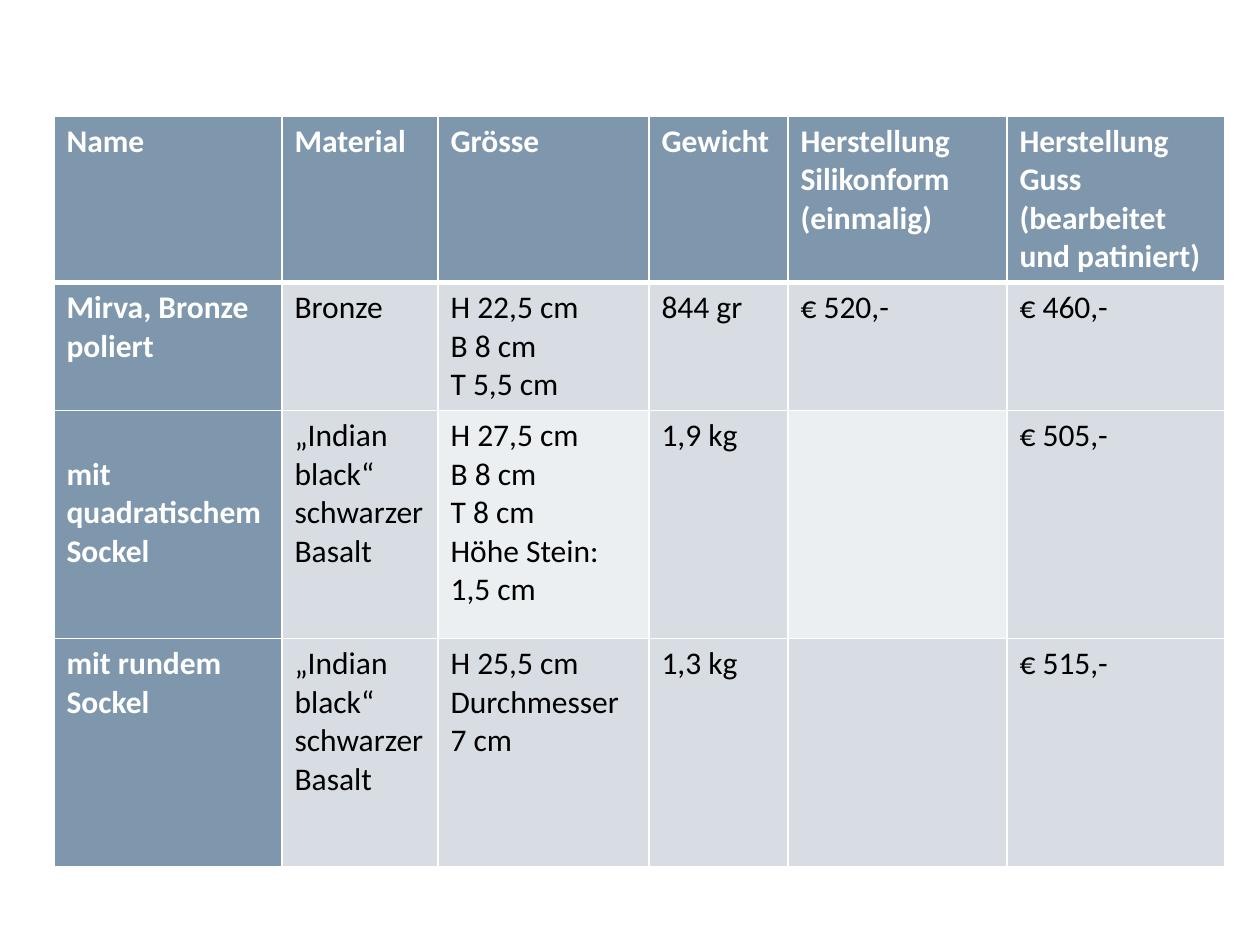
"""Builds a price table for bronze sculptures."""
from lxml import etree
from pptx import Presentation
from pptx.dml.color import RGBColor
from pptx.oxml.ns import qn
from pptx.util import Pt

BLANK = 6
PX = 914400 / 126
COLORS = {"head": "7E97AD", "band": "D8DDE3", "light": "ECEFF1",
          "white": "FFFFFF", "black": "000000"}
BASALT = "„Indian black“\nschwarzer\nBasalt"
ROWS = [
    ["Name", "Material", "Grösse", "Gewicht", "Herstellung Silikonform\n(einmalig)",
     "Herstellung Guss (bearbeitet und patiniert)"],
    ["Mirva, Bronze poliert", "Bronze", "H 22,5 cm\nB 8 cm\nT 5,5 cm", "844 gr",
     "€ 520,-", "€ 460,-"],
    ["mit quadratischem Sockel", BASALT,
     "H 27,5 cm\nB 8 cm\nT 8 cm\nHöhe Stein:\n1,5 cm", "1,9 kg", "", "€ 505,-"],
    ["mit rundem\nSockel", BASALT, "H 25,5 cm\nDurchmesser\n7 cm", "1,3 kg", "", "€ 515,-"],
]
COL_WIDTHS = [228, 156, 211, 139, 219, 218]
ROW_HEIGHTS = [156, 120, 228, 228]
LEFT, TOP, HEIGHT = 54, 116, 747
LIGHT_CELLS = {(2, 2), (2, 4)}
TOP_MARGINS = {(2, 0): 45}


def px(n):
    return round(n * PX)


def set_borders(cell, widths):
    tcPr = cell._tc.get_or_add_tcPr()
    for i, (side, width) in enumerate(widths.items()):
        ln = etree.Element(qn("a:" + side), w=str(Pt(width)))
        fill = etree.SubElement(ln, qn("a:solidFill"))
        etree.SubElement(fill, qn("a:srgbClr"), val=COLORS["white"])
        tcPr.insert(i, ln)


def fill_cell(cell, text, r, c):
    is_head = r == 0 or c == 0
    fill = "head" if is_head else "light" if (r, c) in LIGHT_CELLS else "band"
    cell.fill.solid()
    cell.fill.fore_color.rgb = RGBColor.from_string(COLORS[fill])
    set_borders(cell, {"lnL": 1, "lnR": 1, "lnT": 3 if r == 1 else 1,
                       "lnB": 3 if r == 0 else 1})
    if (r, c) in TOP_MARGINS:
        cell.margin_top = px(TOP_MARGINS[r, c])
    p = cell.text_frame.paragraphs[0]
    p.text = text
    for run in p.runs:
        for name, value in {"name": "Calibri", "size": Pt(18), "bold": is_head}.items():
            setattr(run.font, name, value)
        run.font.color.rgb = RGBColor.from_string(COLORS["white" if is_head else "black"])


def main():
    prs = Presentation()
    prs.slide_width, prs.slide_height = px(1260), px(945)
    s = prs.slides.add_slide(prs.slide_layouts[BLANK])
    frame = s.shapes.add_table(len(ROWS), len(COL_WIDTHS), px(LEFT), px(TOP),
                               px(sum(COL_WIDTHS)), px(HEIGHT))
    table = frame.table
    for col, width in zip(table.columns, COL_WIDTHS):
        col.width = px(width)
    for row, height in zip(table.rows, ROW_HEIGHTS):
        row.height = px(height)
    frame.height = px(HEIGHT)
    for r, texts in enumerate(ROWS):
        for c, text in enumerate(texts):
            fill_cell(table.cell(r, c), text, r, c)
    prs.save("out.pptx")


if __name__ == "__main__":
    main()
